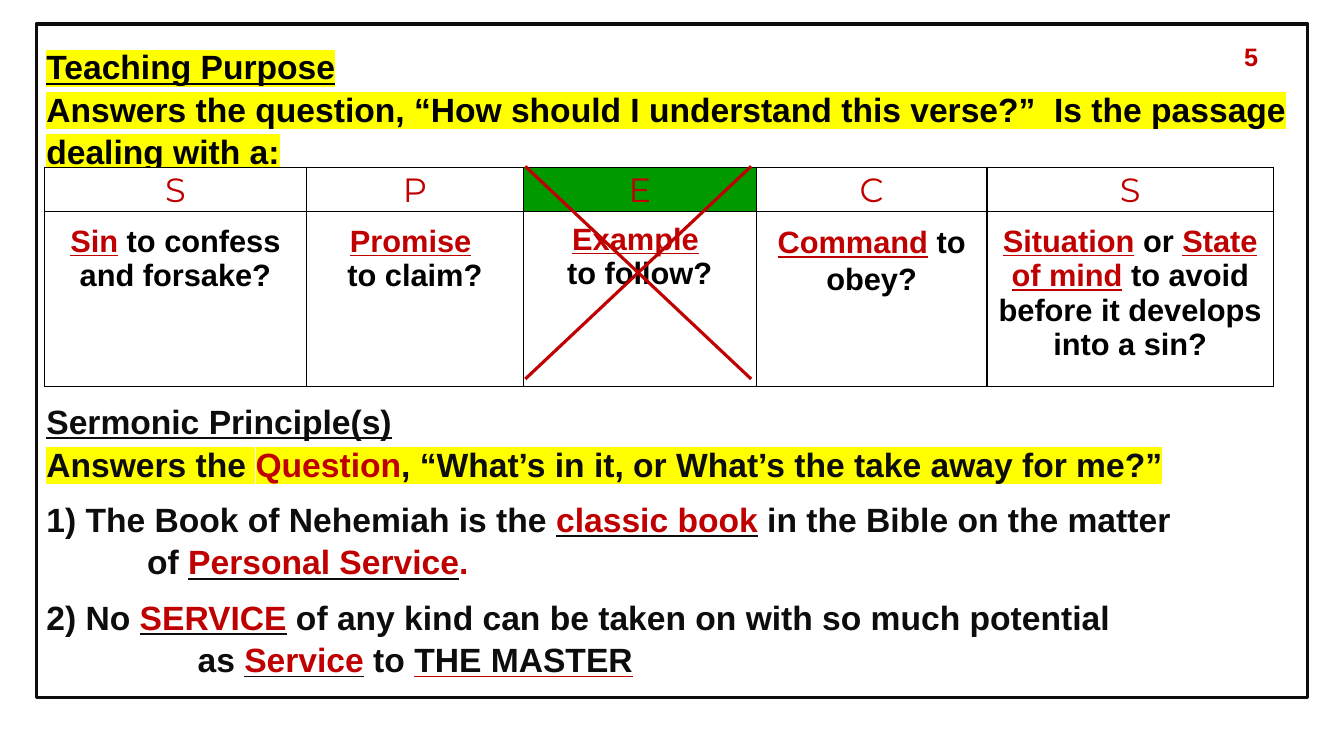
from lxml.etree import SubElement
from pptx import Presentation
from pptx.dml.color import RGBColor
from pptx.enum.shapes import MSO_CONNECTOR, MSO_SHAPE
from pptx.enum.text import MSO_ANCHOR, MSO_AUTO_SIZE, PP_ALIGN
from pptx.oxml import parse_xml
from pptx.oxml.ns import nsdecls, qn
from pptx.util import Inches, Pt

HUES = {"black": "000000", "ink": "0D0D0D", "red": "C00000",
        "green": "009900", "white": "FFFFFF", "yellow": "FFFF00"}
STYLES = {
    "head": {"hue": "black", "under": "black", "mark": "yellow"},
    "ask": {"hue": "black", "mark": "yellow"},
    "label": {"hue": "ink", "under": "ink"},
    "note": {"hue": "ink", "mark": "yellow"},
    "hot": {"hue": "red", "mark": "yellow"},
    "plain": {"hue": "ink"},
    "red": {"hue": "red"},
    "key": {"hue": "red", "under": "ink"},
    "end": {"hue": "ink", "under": "red"},
    "cell": {"hue": "black"},
    "term": {"hue": "red", "under": "red"},
}
TITLE = [
    ({}, [("Teaching Purpose", "head")]),
    ({}, [("Answers the question, “How should I understand this verse?”  "
           "Is the passage dealing with a:", "ask")]),
]
BODY = [
    ({}, [("Sermonic Principle(s)", "label")]),
    ({}, [("Answers the ", "note"), ("Question", "hot"),
          (", “What’s in it, or What’s the take away for me?”", "note")]),
    ({"space_before": Pt(9.5)},
     [("1) The Book of Nehemiah is the ", "plain"), ("classic book", "key"),
      (" in the Bible on the matter", "plain")]),
    ({"indent": 1}, [("of ", "plain"), ("Personal Service", "key"), (".", "red")]),
    ({"space_before": Pt(9.5)},
     [("2) No ", "plain"), ("SERVICE", "key"),
      (" of any kind can be taken on with so much potential", "plain")]),
    ({"indent": 1.5}, [("as ", "plain"), ("Service", "key"),
                       (" to ", "plain"), ("THE MASTER", "end")]),
]
COLUMNS = [
    ("S", 2.6, 0.13, 1, [[("Sin", "term"), (" to confess and forsake?", "cell")]]),
    ("P", 2.15, 0.13, 1, [[("Promise", "term"), (" ", "cell")],
                          [("to claim?", "cell")]]),
    ("E", 2.31, 0.11, 1, [[("Example", "term"), (" ", "cell")],
                          [("to follow?", "cell")]]),
    ("C", 2.29, 0.12, 1.07, [[("Command", "term"), (" to obey?", "cell")]]),
    ("S", 2.84, 0.13, 1, [[("Situation", "term"), (" or ", "cell"),
                           ("State of mind", "term"),
                           (" to avoid before it develops into a sin?", "cell")]]),
]
ROWS = [0.43, 1.74]


def paint(hue):
    return RGBColor.from_string(HUES[hue])


def apply(item, values):
    for name, value in values.items():
        setattr(item, name, value)


def place(item, box):
    apply(item, dict(zip(("left", "top", "width", "height"), map(Inches, box))))


def add_run(para, text, style, size, face="Arial", bold=True):
    run = para.add_run()
    run.text = text
    font = run.font
    look = STYLES[style]
    apply(font, {"size": Pt(size), "bold": bold, "underline": "under" in look})
    font.color.rgb = paint(look["hue"])
    props = run._r.get_or_add_rPr()
    if "mark" in look:
        mark = SubElement(props, qn("a:highlight"))
        SubElement(mark, qn("a:srgbClr")).set("val", HUES[look["mark"]])
    if "under" in look:
        under = SubElement(SubElement(props, qn("a:uFill")), qn("a:solidFill"))
        SubElement(under, qn("a:srgbClr")).set("val", HUES[look["under"]])
    font.name = face


def write(frame, lines, values, size=24, **kind):
    for num, (extra, runs) in enumerate(lines):
        para = frame.add_paragraph() if num else frame.paragraphs[0]
        extra = dict(extra)
        inset = extra.pop("indent", 0)
        apply(para, {"space_before": Pt(0), "space_after": Pt(0),
                     **values, **extra})
        props = para._p.get_or_add_pPr()
        props.set("marL", str(Inches(inset)))
        props.set("indent", "0")
        props.append(parse_xml(f"<a:buNone {nsdecls('a')}/>"))
        for text, style in runs:
            add_run(para, text, style, size, **kind)


def add_frame(slide, box):
    frame = slide.shapes.add_shape(MSO_SHAPE.RECTANGLE, *map(Inches, box))
    frame.shadow.inherit = False
    frame.fill.background()
    frame.line.color.rgb = paint("ink")
    frame.line.width = Pt(2.5)


def add_words(holder, box, lines):
    place(holder, box)
    apply(holder.text_frame, {
        "word_wrap": True, "auto_size": MSO_AUTO_SIZE.NONE,
        "vertical_anchor": MSO_ANCHOR.TOP,
        "margin_left": Inches(0.1), "margin_right": Inches(0.1),
        "margin_top": Inches(0.05), "margin_bottom": Inches(0.05)})
    write(holder.text_frame, lines,
          {"alignment": PP_ALIGN.LEFT, "line_spacing": 1.05})


def dress(cell, hue, top=0):
    apply(cell, {"margin_left": Inches(0.07), "margin_right": Inches(0.07),
                 "margin_top": Inches(top), "margin_bottom": 0})
    cell.fill.solid()
    cell.fill.fore_color.rgb = paint(hue)
    props = cell._tc.get_or_add_tcPr()
    for spot, side in enumerate("LRTB"):
        props.insert(spot, parse_xml(
            f'<a:ln{side} {nsdecls("a")} w="12700"><a:solidFill>'
            f'<a:srgbClr val="{HUES["black"]}"/></a:solidFill></a:ln{side}>'))


def add_grid(slide, box):
    table = slide.shapes.add_table(2, len(COLUMNS), *map(Inches, box)).table
    apply(table, {"first_row": False, "horz_banding": False})
    for row, height in zip(table.rows, ROWS):
        row.height = Inches(height)
    for col, (mark, width, top, gap, lines) in enumerate(COLUMNS):
        table.columns[col].width = Inches(width)
        head, cell = table.cell(0, col), table.cell(1, col)
        dress(head, "green" if mark == "E" else "white")
        dress(cell, "white", top)
        write(head.text_frame, [({}, [(mark, "red")])],
              {"alignment": PP_ALIGN.CENTER, "line_spacing": 1.07},
              face="Montserrat", bold=False)
        write(cell.text_frame, [({}, runs) for runs in lines],
              {"alignment": PP_ALIGN.CENTER, "line_spacing": gap}, size=22)


def add_cross(slide, box):
    left, top, width, height = box
    right, base = left + width, top + height
    for ends in ((right, top, left, base), (left, top, right, base)):
        line = slide.shapes.add_connector(MSO_CONNECTOR.STRAIGHT,
                                          *map(Inches, ends))
        line.line.color.rgb = paint("red")
        line.line.width = Pt(2.25)
        SubElement(line._element.spPr, qn("a:effectLst"))


def add_page(slide, box):
    page = slide.shapes.add_textbox(*map(Inches, box))
    page.text_frame.word_wrap = True
    write(page.text_frame, [({}, [("5", "red")])],
          {"alignment": PP_ALIGN.CENTER}, size=18)


def main():
    deck = Presentation()
    apply(deck, {"slide_width": Inches(13.33), "slide_height": Inches(7.5)})
    slide = deck.slides.add_slide(deck.slide_layouts[1])
    left, top, width, height = 0.36, 0.24, 12.61, 6.68
    add_frame(slide, (left, top, width, height))
    add_words(slide.shapes.title, (left, top + 0.15, width, 1.27), TITLE)
    add_words(slide.placeholders[1], (left, top + 3.67, width, 2.95), BODY)
    add_grid(slide, (left + 0.08, top + 1.42, 12.19, sum(ROWS)))
    add_cross(slide, (left + 4.85, top + 1.41, 2.24, 2.11))
    add_page(slide, (12.23, top + 0.12, 0.36, 0.4))
    deck.save("out.pptx")


if __name__ == "__main__":
    main()
